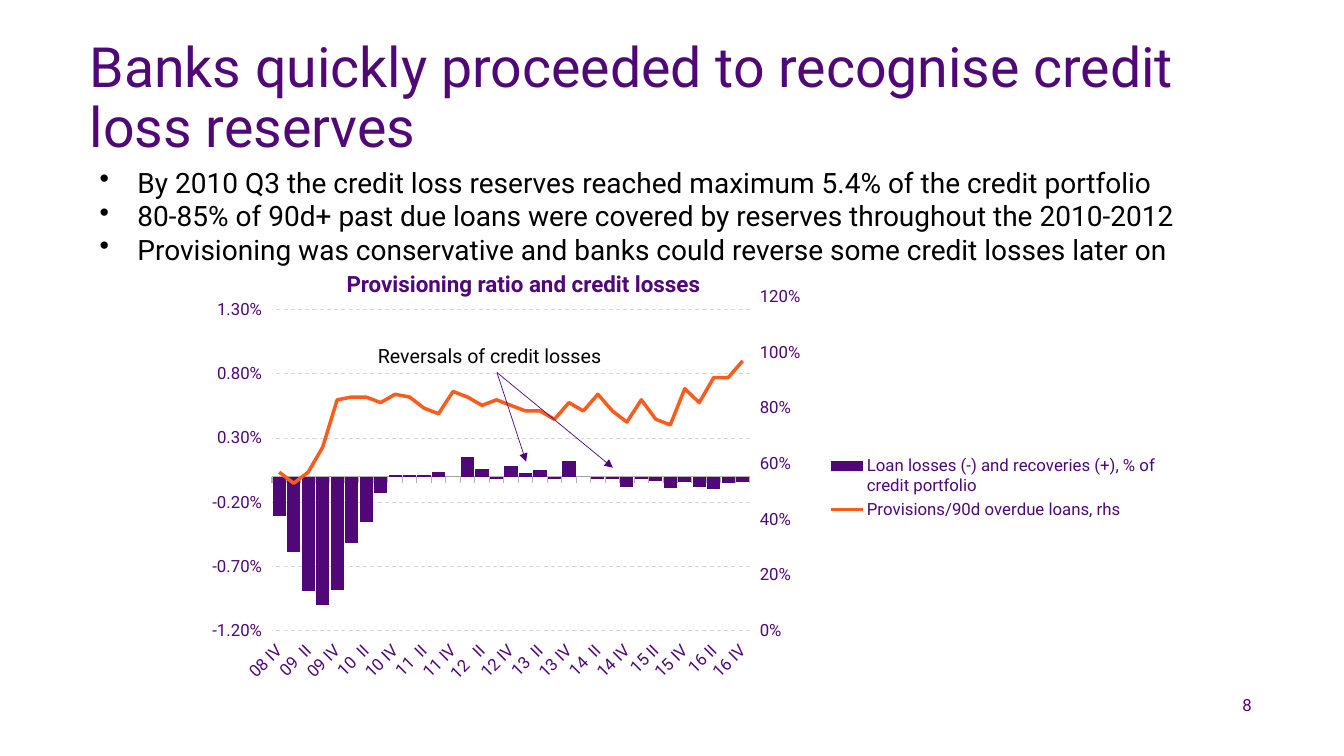
import pptx
import pptx.chart.data
import pptx.dml.color
import pptx.enum.chart
import pptx.enum.dml
import pptx.enum.shapes
import pptx.enum.text
import pptx.oxml
import pptx.oxml.ns
import pptx.util

Pt = pptx.util.Pt
qn = pptx.oxml.ns.qn
rgb = pptx.dml.color.RGBColor.from_string

THEME = {
    "font": "Roboto",
    "purple": rgb("500778"), "orange": rgb("FA5C1D"), "black": rgb("000000"),
    "grid": rgb("D9D9D9"), "axis": rgb("B3B3B3"),
    "title": 39.6, "body": 20, "heading": 16, "note": 14, "small": 12,
}


def style(font, size, color, bold=False):
    font.name = THEME["font"]
    font.size = Pt(THEME[size])
    font.color.rgb = THEME[color]
    font.bold = bold


def add_text(left, top, width, height, lines, size, color, inset=True, bold=False):
    box = slide.shapes.add_textbox(Pt(left), Pt(top), Pt(width), Pt(height))
    frame = box.text_frame
    frame.word_wrap = True
    if not inset:
        frame.margin_left = frame.margin_right = frame.margin_top = frame.margin_bottom = 0
        frame.vertical_anchor = pptx.enum.text.MSO_ANCHOR.MIDDLE
    frame.text = "\n".join(lines)
    for paragraph in frame.paragraphs:
        for run in paragraph.runs:
            style(run.font, size, color, bold)
    return box


deck = pptx.Presentation()
deck.slide_width, deck.slide_height = Pt(960), Pt(540)
slide = deck.slides.add_slide(deck.slide_layouts[6])

# Chart data
quarters = [
    "08 IV", "09 I", "09  II", "09 III", "09 IV", "10 I", "10  II", "10 III", "10 IV",
    "11 I", "11  II", "11 III", "11 IV", "12 I", "12   II", "12  III", "12 IV",
    "13  I", "13  II", "13 III", "13 IV", "14 I", "14  II", "14 III", "14 IV",
    "15 I", "15 II", "15 III", "15 IV", "16 I", "16 II", "16 III", "16 IV"]
loan_losses = [
    -0.0031, -0.0059, -0.0089, -0.01, -0.0088, -0.0052, -0.0035, -0.0013, 0.0001,
    0.0001, 0.0001, 0.0004, 0, 0.0015, 0.0006, -0.0002, 0.0008,
    0.0003, 0.0005, -0.0002, 0.0012, 0, -0.0002, -0.0002, -0.0008,
    -0.0002, -0.0003, -0.0009, -0.0004, -0.0008, -0.001, -0.0005, -0.0004]
provisions = [
    0.57, 0.53, 0.57, 0.66, 0.83, 0.84, 0.84, 0.82, 0.85,
    0.84, 0.8, 0.78, 0.86, 0.84, 0.81, 0.83, 0.81,
    0.79, 0.79, 0.76, 0.82, 0.79, 0.85, 0.79, 0.75,
    0.83, 0.76, 0.74, 0.87, 0.82, 0.91, 0.91, 0.97]
data = pptx.chart.data.CategoryChartData()
data.categories = quarters
data.add_series("Loan losses (-) and recoveries (+), % of credit portfolio", loan_losses, "0.00%")
data.add_series("Provisions/90d overdue loans, rhs", provisions, "0%")
chart = slide.shapes.add_chart(
    pptx.enum.chart.XL_CHART_TYPE.COLUMN_CLUSTERED,
    Pt(138.2), Pt(199.4), Pt(692.6), Pt(295.2), data).chart
chart.has_title = False
style(chart.font, "small", "purple")

# Quarter axis along zero, labels at the bottom
quarter_axis = chart.category_axis
quarter_axis.tick_label_position = pptx.enum.chart.XL_TICK_LABEL_POSITION.LOW
quarter_axis.major_tick_mark = pptx.enum.chart.XL_TICK_MARK.OUTSIDE
quarter_axis.format.line.color.rgb = THEME["axis"]
style(quarter_axis.tick_labels.font, "small", "purple")
quarter_xml = quarter_axis._element
quarter_xml.find(qn("c:txPr")).find(qn("a:bodyPr")).set("rot", "-2700000")
c_ns = pptx.oxml.ns.nsdecls("c")
quarter_xml.find(qn("c:noMultiLvlLbl")).addprevious(
    pptx.oxml.parse_xml(f'<c:tickLblSkip {c_ns} val="2"/>'))

# Left axis for losses
loss_axis = chart.value_axis
loss_axis.minimum_scale, loss_axis.maximum_scale = -0.012, 0.014
loss_axis.major_unit = 0.005
loss_axis.major_tick_mark = pptx.enum.chart.XL_TICK_MARK.OUTSIDE
loss_axis.format.line.fill.background()
loss_axis.tick_labels.number_format = "0.00%"
loss_axis.tick_labels.number_format_is_linked = False
style(loss_axis.tick_labels.font, "small", "purple")
grid = loss_axis.major_gridlines.format.line
grid.color.rgb = THEME["grid"]
grid.width = Pt(0.75)
grid.dash_style = pptx.enum.dml.MSO_LINE.DASH

# Provisions become a line on a right axis
plot_area = chart.element.find(".//" + qn("c:plotArea"))
bars_xml = plot_area.find(qn("c:barChart"))
line_xml = pptx.oxml.parse_xml(
    f'<c:lineChart {c_ns}><c:grouping val="standard"/><c:varyColors val="0"/>'
    '<c:marker val="1"/><c:axId val="5001"/><c:axId val="5002"/></c:lineChart>')
provisions_xml = bars_xml.findall(qn("c:ser"))[1]
for bar_only in provisions_xml.findall(qn("c:invertIfNegative")):
    provisions_xml.remove(bar_only)
line_xml.insert(2, provisions_xml)
bars_xml.addnext(line_xml)
hidden_axis = pptx.oxml.parse_xml(
    f'<c:catAx {c_ns}><c:axId val="5001"/><c:scaling><c:orientation val="minMax"/></c:scaling>'
    '<c:delete val="1"/><c:axPos val="b"/><c:crossAx val="5002"/></c:catAx>')
right_axis = pptx.oxml.parse_xml(
    f'<c:valAx {pptx.oxml.ns.nsdecls("c", "a")}><c:axId val="5002"/><c:scaling>'
    '<c:orientation val="minMax"/><c:max val="1.2"/><c:min val="0"/></c:scaling>'
    '<c:delete val="0"/><c:axPos val="r"/><c:numFmt formatCode="0%" sourceLinked="0"/>'
    '<c:majorTickMark val="out"/><c:minorTickMark val="none"/><c:tickLblPos val="nextTo"/>'
    '<c:spPr><a:ln><a:noFill/></a:ln></c:spPr><c:crossAx val="5001"/><c:crosses val="max"/>'
    '<c:crossBetween val="between"/><c:majorUnit val="0.2"/></c:valAx>')
loss_axis._element.addnext(right_axis)
right_axis.addnext(hidden_axis)

# Series looks
loss_plot, provision_plot = chart.plots
loss_plot.gap_width = 10
loss_plot.vary_by_categories = False
loss_bars = loss_plot.series[0]
loss_bars.invert_if_negative = False
loss_bars.format.fill.solid()
loss_bars.format.fill.fore_color.rgb = THEME["purple"]
provision_line = provision_plot.series[0]
provision_line.smooth = False
provision_line.marker.style = pptx.enum.chart.XL_MARKER_STYLE.NONE
provision_line.format.line.color.rgb = THEME["orange"]
provision_line.format.line.width = Pt(2.5)

# Legend and places inside the chart
chart.has_legend = True
chart.legend.position = pptx.enum.chart.XL_LEGEND_POSITION.RIGHT
chart.legend.include_in_layout = False
style(chart.legend.font, "small", "purple")
for part, index, target, (x, y, w, h) in (
        (plot_area, 0, '<c:layoutTarget val="inner"/>', (0.081, 0.043, 0.493, 0.808)),
        (chart.legend._element, 1, "", (0.65, 0.42, 0.35, 0.17))):
    for old_layout in part.findall(qn("c:layout")):
        part.remove(old_layout)
    part.insert(index, pptx.oxml.parse_xml(
        f'<c:layout {c_ns}><c:manualLayout>{target}<c:xMode val="edge"/><c:yMode val="edge"/>'
        f'<c:x val="{x}"/><c:y val="{y}"/><c:w val="{w}"/><c:h val="{h}"/>'
        '</c:manualLayout></c:layout>'))

# Title, page number and chart heading
title = add_text(64.1, 31, 828, 80, ["Banks quickly proceeded to recognise credit loss reserves"],
                 "title", "purple", inset=False)
title.text_frame.paragraphs[0].line_spacing = 0.9
page = add_text(69.1, 494, 825, 19.4, ["8"], "small", "purple", inset=False)
page.text_frame.paragraphs[0].alignment = pptx.enum.text.PP_ALIGN.RIGHT
add_text(240.5, 189.4, 311.8, 26.6, ["Provisioning ratio and credit losses"],
         "heading", "purple", bold=True)

# Bullets
findings = add_text(64.1, 114.5, 835.2, 80, [
    "By 2010 Q3 the credit loss reserves reached maximum 5.4% of the credit portfolio",
    "80-85% of 90d+ past due loans were covered by reserves throughout the 2010-2012",
    "Provisioning was conservative and banks could reverse some credit losses later on",
], "body", "black")
a_ns = pptx.oxml.ns.nsdecls("a")
for finding in findings.text_frame.paragraphs:
    properties = finding._p.get_or_add_pPr()
    properties.set("marL", str(Pt(27)))
    properties.set("indent", str(Pt(-27)))
    properties.append(pptx.oxml.parse_xml(f'<a:buChar {a_ns} char="•"/>'))

# Note with arrows to the reversals
reversals = add_text(262.8, 241.9, 184.4, 24.2, ["Reversals of credit losses"], "note", "black")
for tip_x, tip_y in ((375.8, 329.8), (437.8, 334.1)):
    arrow = slide.shapes.add_connector(
        pptx.enum.shapes.MSO_CONNECTOR.STRAIGHT, Pt(355), Pt(266.1), Pt(tip_x), Pt(tip_y))
    arrow.begin_connect(reversals, 2)
    arrow.line.color.rgb = THEME["purple"]
    arrow.line.width = Pt(0.5)
    arrow.line._get_or_add_ln().append(
        pptx.oxml.parse_xml(f'<a:tailEnd {a_ns} type="triangle"/>'))
    arrow._element.spPr.append(pptx.oxml.parse_xml(f"<a:effectLst {a_ns}/>"))

deck.save("out.pptx")
